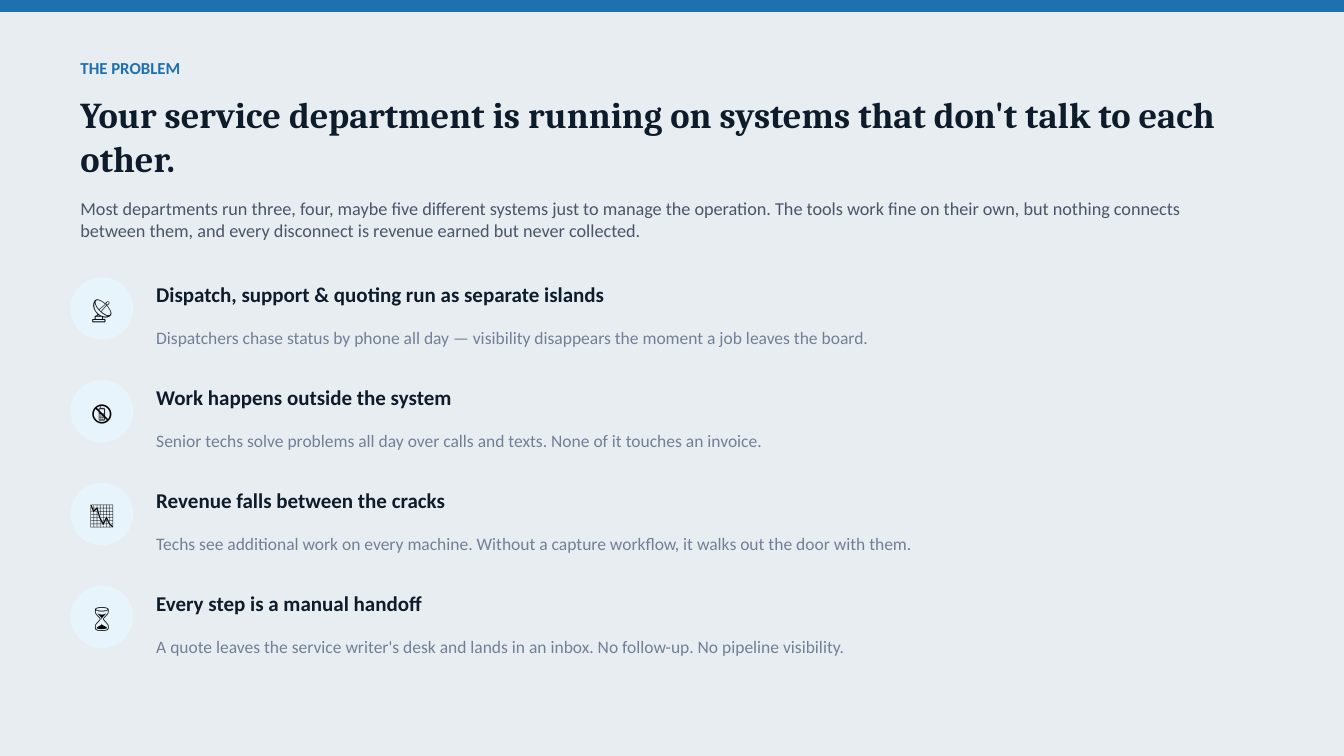
from pptx import Presentation
from pptx.dml.color import RGBColor
from pptx.enum.shapes import MSO_SHAPE
from pptx.enum.text import MSO_ANCHOR, PP_ALIGN
from pptx.util import Inches, Pt

OVAL, RECTANGLE = MSO_SHAPE.OVAL, MSO_SHAPE.RECTANGLE
MIDDLE = MSO_ANCHOR.MIDDLE
LEFT, CENTER = PP_ALIGN.LEFT, PP_ALIGN.CENTER

BACKGROUND = RGBColor(0xE8, 0xED, 0xF2)
BLUE = RGBColor(0x1F, 0x71, 0xAD)
NAVY = RGBColor(0x0D, 0x1B, 0x2A)
SLATE = RGBColor(0x4A, 0x55, 0x68)
GRAY = RGBColor(0x71, 0x80, 0x96)
PALE_BLUE = RGBColor(0xE8, 0xF4, 0xFC)
BLACK = RGBColor(0, 0, 0)

SLIDE_WIDTH, SLIDE_HEIGHT = 13.33, 7.5
MARGIN = 0.7
PROBLEMS_TOP, PROBLEM_PITCH = 2.72, 1.02
PADDED = (0.1, 0.05)
FLUSH = (0, 0)

EYEBROW_FONT = {"name": "Calibri", "size": Pt(12), "bold": True}
TITLE_FONT = {"name": "Cambria", "size": Pt(26), "bold": True}
INTRO_FONT = {"name": "Calibri", "size": Pt(13)}
ICON_FONT = {"name": "Calibri", "size": Pt(17.4)}
HEADING_FONT = {"name": "Calibri", "size": Pt(15), "bold": True}
DETAIL_FONT = {"name": "Calibri", "size": Pt(12.5)}

PROBLEMS = [
    ("📡", "Dispatch, support & quoting run as separate islands",
     "Dispatchers chase status by phone all day — visibility disappears "
     "the moment a job leaves the board."),
    ("📵", "Work happens outside the system",
     "Senior techs solve problems all day over calls and texts. "
     "None of it touches an invoice."),
    ("📉", "Revenue falls between the cracks",
     "Techs see additional work on every machine. Without a capture "
     "workflow, it walks out the door with them."),
    ("⌛", "Every step is a manual handoff",
     "A quote leaves the service writer's desk and lands in an inbox. "
     "No follow-up. No pipeline visibility."),
]


def add_text(slide, box, text, font_format, color, padding=FLUSH, align=LEFT):
    frame = slide.shapes.add_textbox(*map(Inches, box)).text_frame
    across, down = map(Inches, padding)
    frame_format = {
        "word_wrap": True, "vertical_anchor": MIDDLE,
        "margin_left": across, "margin_right": across,
        "margin_top": down, "margin_bottom": down,
    }
    for attribute, value in frame_format.items():
        setattr(frame, attribute, value)
    paragraph = frame.paragraphs[0]
    paragraph.alignment = align
    run = paragraph.add_run()
    run.text = text
    for attribute, value in font_format.items():
        setattr(run.font, attribute, value)
    run.font.color.rgb = color


def add_filled(slide, preset, box, color):
    shape = slide.shapes.add_shape(preset, *map(Inches, box))
    shape.shadow.inherit = False
    shape.fill.solid()
    shape.fill.fore_color.rgb = color
    shape.line.fill.background()
    return shape


def add_header(slide, left, top):
    add_text(slide, (left, top, 6, 0.35), "THE PROBLEM",
             EYEBROW_FONT, BLUE, PADDED)
    add_text(slide, (left, top + 0.35, 11.9, 1),
             "Your service department is running on systems that don't talk "
             "to each other.", TITLE_FONT, NAVY, PADDED)
    add_text(slide, (left, top + 1.35, 11.5, 0.65),
             "Most departments run three, four, maybe five different systems "
             "just to manage the operation. The tools work fine on their own, "
             "but nothing connects between them, and every disconnect is "
             "revenue earned but never collected.", INTRO_FONT, SLATE, PADDED)


def add_problem(slide, left, top, icon, heading, detail):
    badge = (left, top + 0.03, 0.62, 0.62)
    add_filled(slide, OVAL, badge, PALE_BLUE)
    add_text(slide, badge, icon, ICON_FONT, BLACK, align=CENTER)
    text_left = left + 0.85
    add_text(slide, (text_left, top, 10.6, 0.4), heading, HEADING_FONT, NAVY)
    add_text(slide, (text_left, top + 0.38, 10.6, 0.5), detail,
             DETAIL_FONT, GRAY)


def add_top_bar(slide, width, height):
    bar = add_filled(slide, RECTANGLE, (0, 0, width, height), BLUE)
    bar.line.color.rgb = BLUE
    bar.line.width = Pt(1)


def main():
    deck = Presentation()
    deck.slide_width = Inches(SLIDE_WIDTH)
    deck.slide_height = Inches(SLIDE_HEIGHT)
    slide = deck.slides.add_slide(deck.slide_layouts[6])
    slide.background.fill.solid()
    slide.background.fill.fore_color.rgb = BACKGROUND

    add_header(slide, MARGIN, 0.5)
    for row, problem in enumerate(PROBLEMS):
        add_problem(slide, MARGIN, PROBLEMS_TOP + row * PROBLEM_PITCH, *problem)
    add_top_bar(slide, SLIDE_WIDTH, 0.11)
    deck.save("out.pptx")


if __name__ == "__main__":
    main()
